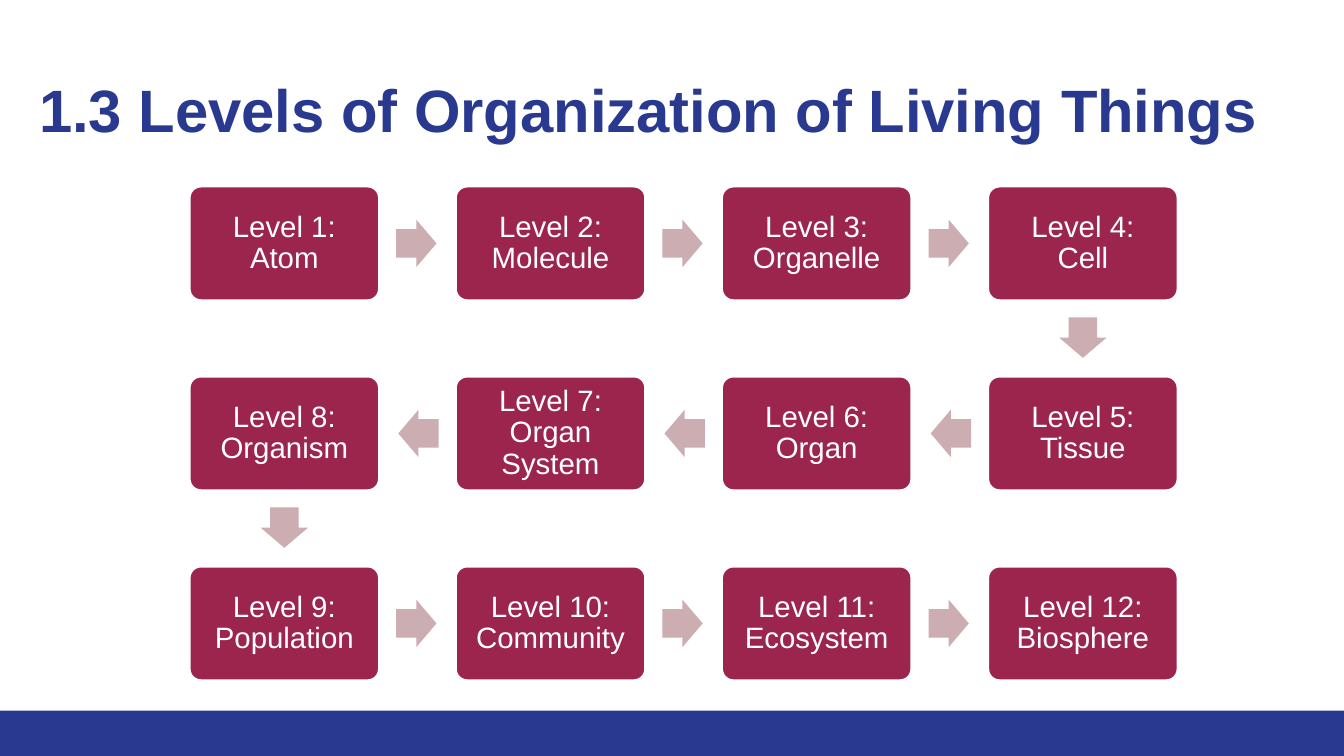
from pptx import Presentation
from pptx import util as u
from pptx.dml.color import RGBColor
from pptx.enum import shapes, text

TITLE = "1.3 Levels of Organization of Living Things"
LEVELS = ["Atom", "Molecule", "Organelle", "Cell",
          "Tissue", "Organ", "Organ System", "Organism",
          "Population", "Community", "Ecosystem", "Biosphere"]

NAVY, CRIMSON, ROSE, WHITE = "2A3990", "9C254D", "CBADB2", "FFFFFF"
WIDTH, HEIGHT = 13.33, 7.5
FOOTER_HEIGHT = 0.06 * HEIGHT
COLUMNS = 4
GRID_LEFT, GRID_TOP = 1.88, 1.85
COLUMN_PITCH, ROW_PITCH = 2.64, 1.885
BOX_WIDTH, BOX_HEIGHT = 1.88, 1.13
ARROW_WIDTH, ARROW_HEIGHT = 0.4, 0.47
ARROW_SHARE = 0.496


def color(value):
    return RGBColor.from_string(value)


def add_block(slide, kind, left, top, width, height, fill, line=None, adjustments=()):
    shape = slide.shapes.add_shape(kind, *map(u.Inches, (left, top, width, height)))
    shape.shadow.inherit = False
    shape.fill.solid()
    shape.fill.fore_color.rgb = color(fill)
    if line:
        shape.line.color.rgb = color(line)
        shape.line.width = u.Pt(1.5)
    else:
        shape.line.fill.background()
    for index, value in enumerate(adjustments):
        shape.adjustments[index] = value
    return shape


def write(shape, words, size, ink, bold=False, align=text.PP_ALIGN.LEFT, inset=0.1):
    frame = shape.text_frame
    frame.word_wrap = True
    frame.vertical_anchor = text.MSO_ANCHOR.MIDDLE
    frame.margin_left = frame.margin_right = u.Inches(inset)
    frame.margin_top = frame.margin_bottom = u.Inches(inset)
    paragraph = frame.paragraphs[0]
    paragraph.alignment = align
    paragraph.line_spacing = 0.9
    run = paragraph.add_run()
    run.text = words
    run.font.name = "Arial"
    run.font.size = u.Pt(size)
    run.font.bold = bold
    run.font.color.rgb = color(ink)


def box_center(index):
    row, column = divmod(index, COLUMNS)
    if row % 2:
        column = COLUMNS - 1 - column
    return (GRID_LEFT + column * COLUMN_PITCH + BOX_WIDTH / 2,
            GRID_TOP + row * ROW_PITCH + BOX_HEIGHT / 2)


def add_level(slide, index, name):
    x, y = box_center(index)
    box = add_block(slide, shapes.MSO_SHAPE.ROUNDED_RECTANGLE,
                    x - BOX_WIDTH / 2, y - BOX_HEIGHT / 2, BOX_WIDTH, BOX_HEIGHT,
                    CRIMSON, line=WHITE, adjustments=[0.1])
    write(box, f"Level {index + 1}: {name}", 21, WHITE,
          align=text.PP_ALIGN.CENTER, inset=0.12)


def add_arrow(slide, index):
    x, y = box_center(index)
    next_x, next_y = box_center(index + 1)
    middle_x = x + (next_x - x) * ARROW_SHARE
    middle_y = y + (next_y - y) * ARROW_SHARE
    arrow = add_block(slide, shapes.MSO_SHAPE.RIGHT_ARROW,
                      middle_x - ARROW_WIDTH / 2, middle_y - ARROW_HEIGHT / 2,
                      ARROW_WIDTH, ARROW_HEIGHT, ROSE, adjustments=[0.6, 0.5])
    arrow.rotation = 90 if next_y > y else 180 if next_x < x else 0


def main():
    presentation = Presentation()
    presentation.slide_width = u.Inches(WIDTH)
    presentation.slide_height = u.Inches(HEIGHT)
    slide = presentation.slides.add_slide(presentation.slide_layouts[6])

    add_block(slide, shapes.MSO_SHAPE.RECTANGLE,
              0, HEIGHT - FOOTER_HEIGHT, WIDTH, FOOTER_HEIGHT, NAVY)
    title = slide.shapes.add_textbox(*map(u.Inches, (0.29, 0.4, 12.69, 1.45)))
    write(title, TITLE, 42.7, NAVY, bold=True)

    for index, name in enumerate(LEVELS):
        add_level(slide, index, name)
        if index + 1 < len(LEVELS):
            add_arrow(slide, index)

    presentation.save("out.pptx")


if __name__ == "__main__":
    main()
